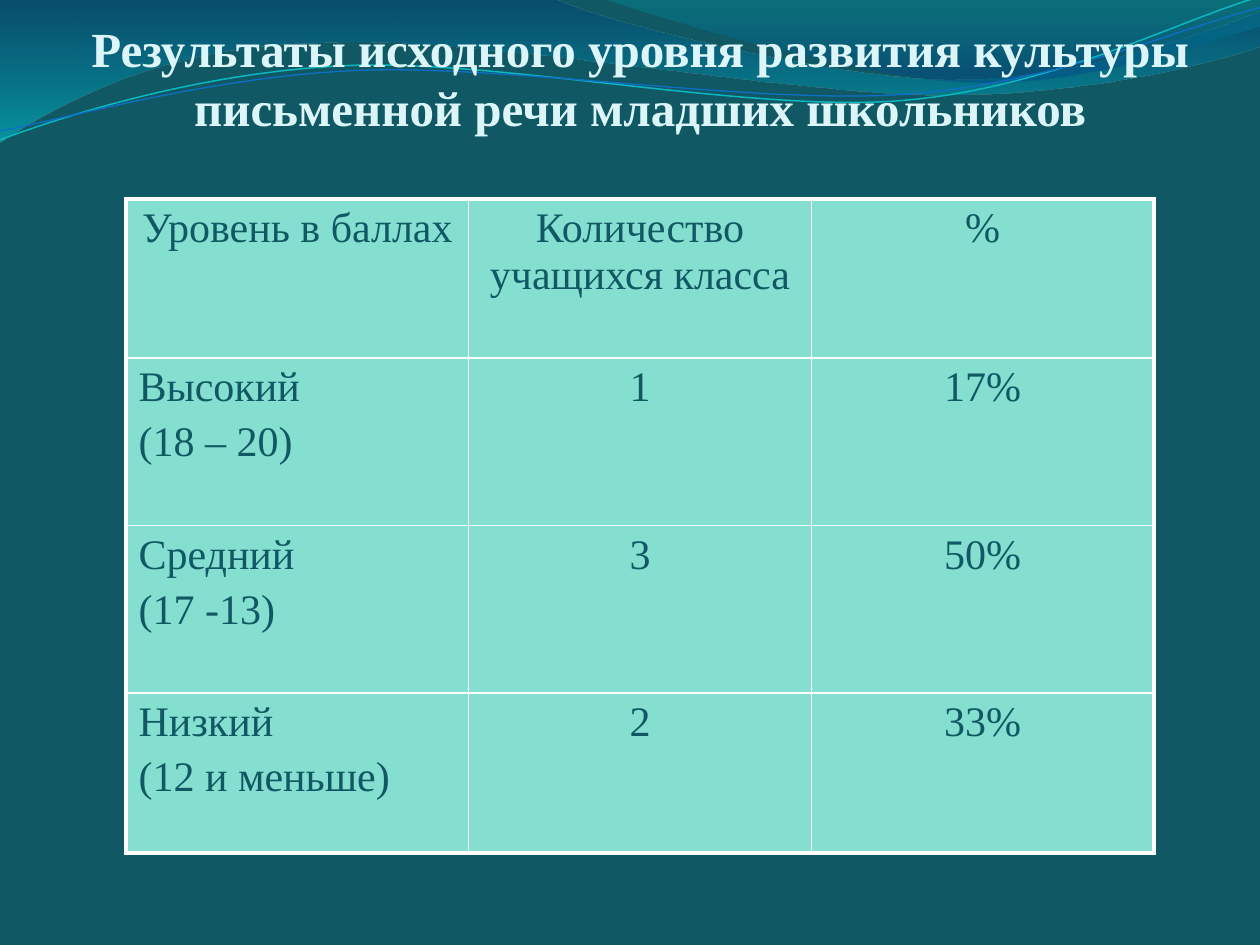
"""Build a slide with a table of pupils' writing levels under a wave banner."""
from dataclasses import dataclass
from math import cos, radians, sin
from typing import Any, Optional

from lxml import etree
from pptx import Presentation
from pptx.dml.color import RGBColor
from pptx.enum.text import MSO_ANCHOR, MSO_AUTO_SIZE, PP_ALIGN
from pptx.oxml.ns import qn
from pptx.util import Inches, Pt

LEFT, CENTER = PP_ALIGN.LEFT, PP_ALIGN.CENTER
BOTTOM = MSO_ANCHOR.BOTTOM
NO_FIT = MSO_AUTO_SIZE.NONE
TEAL = RGBColor(0x10, 0x59, 0x64)
MINT = RGBColor(0x85, 0xDF, 0xD0)
ICE = RGBColor(0xDB, 0xF5, 0xF9)
WHITE = RGBColor(0xFF, 0xFF, 0xFF)
NAVY = RGBColor(0x00, 0x3E, 0x76)
CYAN = RGBColor(0x00, 0xC6, 0xCF)
SEA = RGBColor(0x00, 0xA1, 0xA9)
DEEP = RGBColor(0x00, 0x4A, 0x8C)
AQUA = RGBColor(0x0A, 0xB8, 0xBF)
BLUE = RGBColor(0x0F, 0x6F, 0xC6)
FACE = "Times New Roman"
TILT = 2.7
TITLE = "Результаты исходного уровня развития культуры письменной речи младших школьников"
TITLE_FONT = {"size": Pt(28), "name": FACE, "bold": True}
CELL_FONT = {"size": Pt(24), "name": FACE, "bold": False}
TITLE_BOX = {"left": Inches(0.58), "top": Inches(-0.42),
             "width": Inches(9), "height": Inches(1.5)}
TITLE_FRAME = {"auto_size": NO_FIT, "word_wrap": True, "vertical_anchor": BOTTOM,
               "margin_left": 0, "margin_right": 0,
               "margin_top": Inches(0.05), "margin_bottom": 0}
WIDTH = 2.72
HEIGHTS = (1.26, 1.33, 1.33, 1.27)
ROWS = (
    ("Уровень в баллах", "Количество учащихся класса", "%"),
    ("Высокий\n(18 – 20)", "1", "17%"),
    ("Средний\n(17 -13)", "3", "50%"),
    ("Низкий\n(12 и меньше)", "2", "33%"),
)


@dataclass(frozen=True)
class Stop:
    """One gradient stop."""
    place: float
    color: RGBColor
    alpha: int


@dataclass(frozen=True)
class Wave:
    """A path of straight (2 numbers) and cubic (6 numbers) steps."""
    start: tuple
    steps: tuple
    stops: tuple = ()
    color: Optional[RGBColor] = None
    width: float = 0
    pivot: tuple = ()


WAVES = (
    Wave((0, -0.01), (
        (4.4, -0.01), (4.76, 0.17, 6.64, 0.63, 7.58, 0.63),
        (8.53, 0.63, 9.58, 0.26, 10, 0.09), (10.01, 0.36),
        (9.83, 0.44, 8.7, 0.76, 7.46, 0.75), (6.22, 0.75, 3.82, 0.28, 2.57, 0.34),
        (1.29, 0.35, 0.46, 0.83, -0.01, 1.13)),
        (Stop(0, NAVY, 45), Stop(1, CYAN, 55))),
    Wave((4.79, -0.01), (
        (5.09, 0.11, 6.82, 0.62, 7.69, 0.65),
        (8.56, 0.69, 9.61, 0.32, 10, 0.21), (10, 0)),
        (Stop(0, SEA, 30), Stop(0.8, DEEP, 45))),
    Wave((0, 1.11), (
        (0.48, 0.93, 1.58, 0.57, 2.77, 0.52), (3.95, 0.47, 5.93, 0.89, 7.13, 0.8),
        (8.33, 0.71, 9.38, 0.15, 9.98, -0.02)),
        color=AQUA, width=0.85, pivot=(4.99, 0.58)),
    Wave((0, 1.04), (
        (0.47, 0.96, 1.64, 0.61, 2.83, 0.56), (4.03, 0.51, 5.97, 0.83, 7.17, 0.75),
        (8.36, 0.67, 9.41, 0.21, 10, 0.06)),
        color=BLUE, width=0.75, pivot=(5, 0.59)),
)


def apply(item: Any, look: dict) -> None:
    """Set each format value on the item."""
    for key, value in look.items():
        setattr(item, key, value)


def level(point: tuple, pivot: tuple) -> tuple:
    """Turn a point about the pivot to undo the tilt."""
    if not pivot:
        return point
    turn = radians(TILT)
    dx, dy = point[0] - pivot[0], point[1] - pivot[1]
    return (pivot[0] + dx * cos(turn) - dy * sin(turn),
            pivot[1] + dx * sin(turn) + dy * cos(turn))


def bend(shape: Any, steps: tuple) -> None:
    """Join each three lines of a cubic step into one curve."""
    lines = iter(list(shape._element.iter(qn("a:lnTo"))))
    for step in steps:
        first = next(lines)
        if len(step) == 6:
            first.tag = qn("a:cubicBezTo")
            for line in (next(lines), next(lines)):
                first.append(line[0])
                line.getparent().remove(line)


def draw_wave(slide: Any, wave: Wave) -> None:
    """Draw a wave as a gradient band or a thin line."""
    points = [wave.start]
    for step in wave.steps:
        points.extend(zip(step[::2], step[1::2]))
    first, *rest = [tuple(map(Inches, level(p, wave.pivot))) for p in points]
    pen = slide.shapes.build_freeform(*first)
    pen.add_line_segments(rest, close=bool(wave.stops))
    shape = pen.convert_to_shape()
    bend(shape, wave.steps)
    shape.shadow.inherit = False
    if not wave.stops:
        shape.rotation = 360 - TILT
        shape.fill.background()
        shape.line.color.rgb = wave.color
        shape.line.width = Pt(wave.width)
        return
    shape.line.fill.background()
    shape.fill.gradient()
    shape.fill.gradient_angle = 270
    for mark, stop in zip(shape.fill.gradient_stops, wave.stops):
        mark.position = stop.place
        mark.color.rgb = stop.color
    for node, stop in zip(shape._element.spPr.iter(qn("a:srgbClr")), wave.stops):
        etree.SubElement(node, qn("a:alpha"), val=str(stop.alpha * 1000))


def draw_edge(cell: Any, side: str, width: float) -> None:
    """Draw one white border of a cell."""
    line = etree.SubElement(cell._tc.get_or_add_tcPr(), qn(f"a:ln{side}"),
                            w=str(Pt(width)))
    fill = etree.SubElement(line, qn("a:solidFill"))
    etree.SubElement(fill, qn("a:srgbClr"), val=str(WHITE))


def draw_cell(cell: Any, text: str, align: Any, outer: dict) -> None:
    """Fill in the borders, colour and text of a cell."""
    for side, edge in outer.items():
        draw_edge(cell, side, 2.25 if edge else 1)
    cell.fill.solid()
    cell.fill.fore_color.rgb = MINT
    cell.text_frame.text = text
    for para in cell.text_frame.paragraphs:
        apply(para, {"alignment": align, "space_before": Pt(5)})
        apply(para.runs[0].font, CELL_FONT)
        para.runs[0].font.color.rgb = TEAL


def draw_table(slide: Any) -> None:
    """Draw the table of levels."""
    rows, cols = len(ROWS), len(ROWS[0])
    table = slide.shapes.add_table(rows, cols, Inches(1), Inches(1.58),
                                   Inches(WIDTH * cols), Inches(sum(HEIGHTS))).table
    apply(table, {"first_row": False, "horz_banding": False})
    for row, height in zip(table.rows, HEIGHTS):
        row.height = Inches(height)
    for r, texts in enumerate(ROWS):
        for c, text in enumerate(texts):
            outer = {"L": c == 0, "R": c == cols - 1, "T": r == 0, "B": r == rows - 1}
            draw_cell(table.cell(r, c), text, LEFT if r and not c else CENTER, outer)


def draw_title(slide: Any) -> None:
    """Place and format the title."""
    title = slide.shapes.title
    title._element.getparent().append(title._element)
    apply(title, TITLE_BOX)
    apply(title.text_frame, TITLE_FRAME)
    title.text_frame.text = TITLE
    para = title.text_frame.paragraphs[0]
    para.alignment = CENTER
    apply(para.runs[0].font, TITLE_FONT)
    para.runs[0].font.color.rgb = ICE


def main() -> None:
    """Build and save the deck."""
    deck = Presentation()
    apply(deck, {"slide_width": Inches(10), "slide_height": Inches(7.5)})
    slide = deck.slides.add_slide(deck.slide_layouts[5])
    slide.background.fill.solid()
    slide.background.fill.fore_color.rgb = TEAL
    for wave in WAVES:
        draw_wave(slide, wave)
    draw_title(slide)
    draw_table(slide)
    deck.save("out.pptx")


if __name__ == "__main__":
    main()
